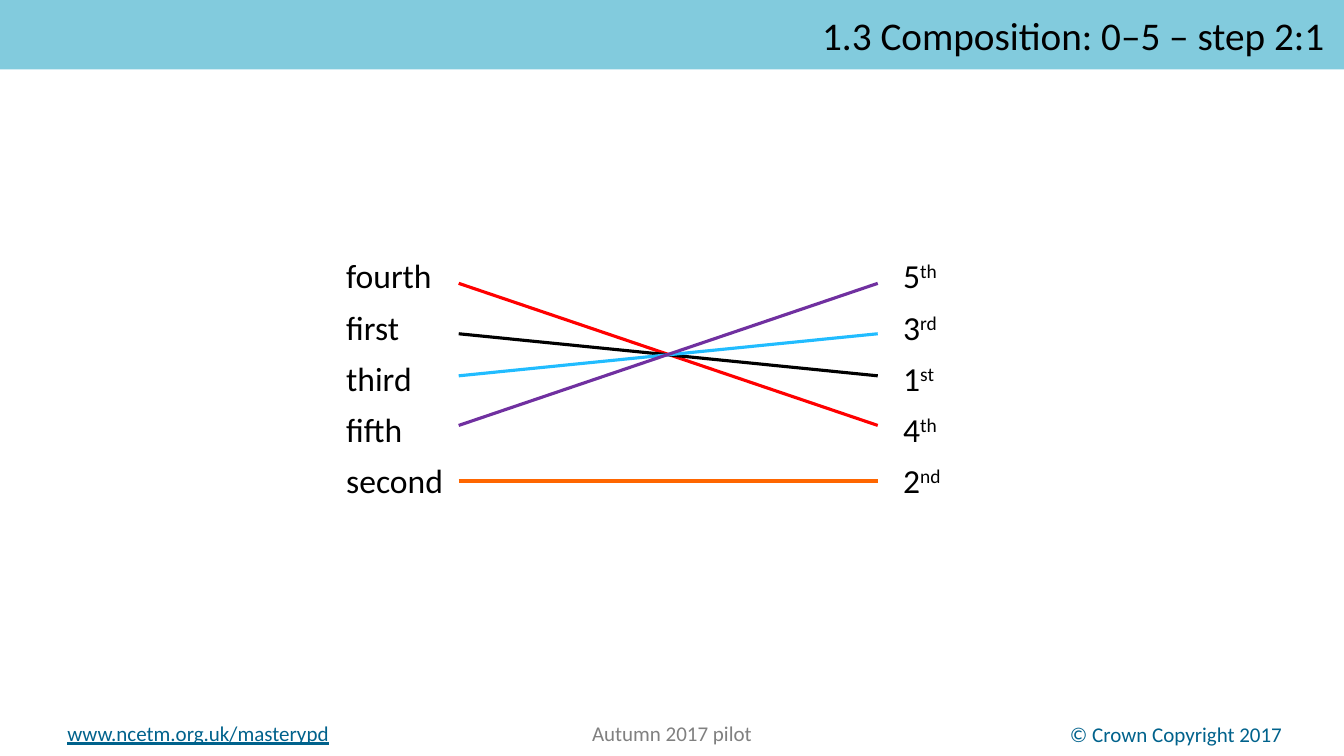
"""Builds a slide that matches ordinal words to ordinal numerals."""
from dataclasses import dataclass

from lxml.etree import SubElement
from pptx import Presentation
from pptx.dml.color import RGBColor
from pptx.enum.shapes import MSO_CONNECTOR
from pptx.enum.text import MSO_ANCHOR, MSO_AUTO_SIZE, PP_ALIGN
from pptx.oxml.ns import qn
from pptx.util import Cm, Pt


@dataclass(frozen=True)
class Theme:
    font: str = "Calibri"
    banner: str = "82CBDD"
    paper: str = "FFFFFF"
    ink: str = "000000"
    teal: str = "00628C"
    grey: str = "808080"
    title_size: float = 28
    table_size: float = 24
    footer_size: float = 15
    line_width: float = 2.25


class SlideBuilder:
    def __init__(self, page, theme):
        self.page = page
        self.theme = theme

    def style(self, para, size, colour, align=PP_ALIGN.LEFT):
        para.alignment = align
        para.font.name = self.theme.font
        para.font.size = Pt(size)
        para.font.color.rgb = RGBColor.from_string(colour)

    def fill(self, target, colour):
        target.fill.solid()
        target.fill.fore_color.rgb = RGBColor.from_string(colour)

    def title(self, text, width, height):
        box = self.page.shapes.title
        box.left, box.top, box.width, box.height = 0, 0, width, height
        self.fill(box, self.theme.banner)
        frame = box.text_frame
        frame.text = text
        frame.auto_size = MSO_AUTO_SIZE.NONE
        frame.vertical_anchor = MSO_ANCHOR.MIDDLE
        frame.margin_left = frame.margin_right = Cm(0.5)
        self.style(frame.paragraphs[0], self.theme.title_size, self.theme.ink, PP_ALIGN.RIGHT)

    def footer(self, text, left, top, colour, align, underline=False):
        box = self.page.shapes.add_textbox(Cm(left), Cm(top), Cm(10.41), Cm(0.9))
        frame = box.text_frame
        frame.word_wrap = True
        frame.text = text
        para = frame.paragraphs[0]
        self.style(para, self.theme.footer_size, colour, align)
        para.font.underline = underline

    def table(self, words, numerals, left, top, column_width, row_height, indent):
        rows = len(words)
        frame = self.page.shapes.add_table(
            rows, 2, Cm(left), Cm(top), Cm(2 * column_width), Cm(rows * row_height))
        grid = frame.table
        grid.first_row = grid.horz_banding = False
        for row, (word, numeral) in enumerate(zip(words, numerals)):
            grid.cell(row, 0).text = word
            self.ordinal(grid.cell(row, 1), numeral, indent)
            for column in range(2):
                cell = grid.cell(row, column)
                self.fill(cell, self.theme.paper)
                self.style(cell.text_frame.paragraphs[0], self.theme.table_size, self.theme.ink)

    def ordinal(self, cell, numeral, indent):
        cell.margin_left = Cm(indent)
        para = cell.text_frame.paragraphs[0]
        para.add_run().text = numeral[0]
        suffix = para.add_run()
        suffix.text = numeral[1:]
        suffix.font._element.set("baseline", "30000")

    def line(self, start, end, colour):
        points = [Cm(value) for value in (*start, *end)]
        link = self.page.shapes.add_connector(MSO_CONNECTOR.STRAIGHT, *points)
        link.line.color.rgb = RGBColor.from_string(colour)
        link.line.width = Pt(self.theme.line_width)
        SubElement(link._element.spPr, qn("a:effectLst"))


def main():
    theme = Theme()
    deck = Presentation()
    deck.slide_width, deck.slide_height = Cm(33.87), Cm(19.05)
    page = deck.slides.add_slide(deck.slide_layouts[5])
    builder = SlideBuilder(page, theme)

    builder.title("1.3 Composition: 0–5 – step 2:1", deck.slide_width, Cm(1.75))
    builder.footer("www.ncetm.org.uk/masterypd", 1.45, 18.03, theme.teal, PP_ALIGN.LEFT, True)
    builder.footer("Autumn 2017 pilot", 11.73, 18.03, theme.grey, PP_ALIGN.CENTER)
    builder.footer("© Crown Copyright 2017", 22.15, 18.06, theme.teal, PP_ALIGN.RIGHT)

    matches = {
        "fourth": ("4th", "FF0000"),
        "first": ("1st", theme.ink),
        "third": ("3rd", "21BCFF"),
        "fifth": ("5th", "7030A0"),
        "second": ("2nd", "FF6600"),
    }
    numerals = ["5th", "3rd", "1st", "4th", "2nd"]
    builder.table(list(matches), numerals, left=8.47, top=6.35,
                  column_width=8.47, row_height=1.29, indent=5.82)

    line_heights = [7.14, 8.41, 9.47, 10.72, 12.12]
    for start_height, (numeral, colour) in zip(line_heights, matches.values()):
        end_height = line_heights[numerals.index(numeral)]
        builder.line((11.56, start_height), (22.12, end_height), colour)

    deck.save("out.pptx")


if __name__ == "__main__":
    main()
